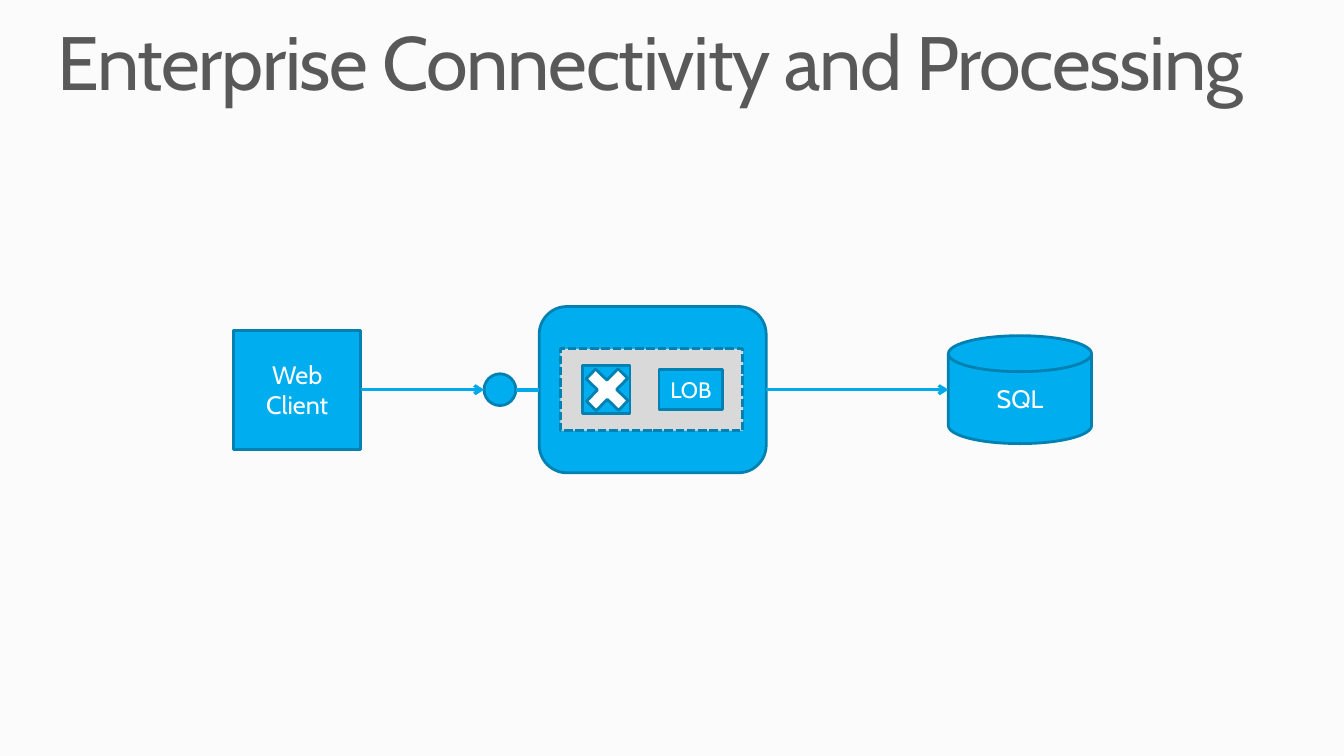
from lxml.etree import SubElement
from pptx import Presentation
from pptx.dml.color import RGBColor
from pptx.enum.dml import MSO_LINE
from pptx.enum.shapes import MSO_CONNECTOR, MSO_SHAPE
from pptx.enum.text import MSO_ANCHOR, MSO_AUTO_SIZE, PP_ALIGN
from pptx.oxml.ns import qn
from pptx.util import Cm, Pt

FONT = "Cabin"
COLORS = {
    "background": "FBFBFB",
    "title": "595959",
    "blue": "00AEEF",
    "outline": "0081B1",
    "arrow": "00AAEA",
    "panel": "D9D9D9",
    "white": "FFFFFF",
}
AXIS = 9.82  # height of the line on which the whole diagram is centred, in cm


def color(name):
    return RGBColor.from_string(COLORS[name])


def add_run(paragraph, text, size, color_name):
    run = paragraph.add_run()
    run.text = text
    run.font.name = FONT
    run.font.size = Pt(size)
    run.font.color.rgb = color(color_name)
    return run


def set_title(slide, text):
    title = slide.shapes.title
    title.left, title.top, title.width, title.height = Cm(1.45), Cm(0.64), Cm(30.96), Cm(2.08)
    frame = title.text_frame
    frame.margin_left = frame.margin_top = frame.margin_right = frame.margin_bottom = 0
    frame.word_wrap = True
    frame.auto_size = MSO_AUTO_SIZE.SHAPE_TO_FIT_TEXT
    frame.vertical_anchor = MSO_ANCHOR.TOP
    paragraph = frame.paragraphs[0]
    paragraph.alignment = PP_ALIGN.LEFT
    paragraph.line_spacing = 0.9
    run = add_run(paragraph, text, 54, "title")
    run.font._element.set("spc", "-100")


def add_node(slide, kind, left, width, height, fill="blue", label=None, size=18):
    """Add an outlined shape centred on the diagram's axis; lengths in cm."""
    shape = slide.shapes.add_shape(
        kind, Cm(left), Cm(AXIS - height / 2), Cm(width), Cm(height)
    )
    shape.shadow.inherit = False
    shape.fill.solid()
    shape.fill.fore_color.rgb = color(fill)
    shape.line.color.rgb = color("outline")
    shape.line.width = Pt(2)
    if label:
        frame = shape.text_frame
        frame.word_wrap = True
        frame.vertical_anchor = MSO_ANCHOR.MIDDLE
        paragraph = frame.paragraphs[0]
        paragraph.alignment = PP_ALIGN.CENTER
        add_run(paragraph, label, size, "white")
    return shape


def add_link(slide, start, end, width=2.25, arrow=True):
    """Join the right side of one node to the left side of another."""
    connector = slide.shapes.add_connector(
        MSO_CONNECTOR.STRAIGHT, start.left + start.width, Cm(AXIS), end.left, Cm(AXIS)
    )
    boxes = (MSO_SHAPE.RECTANGLE, MSO_SHAPE.ROUNDED_RECTANGLE)
    if start.auto_shape_type in boxes:
        connector.begin_connect(start, 3)
    if end.auto_shape_type in boxes:
        connector.end_connect(end, 1)
    connector.line.color.rgb = color("arrow")
    connector.line.width = Pt(width)
    if arrow:
        SubElement(connector.line._get_or_add_ln(), qn("a:tailEnd"), type="arrow")
    SubElement(connector._element.spPr, qn("a:effectLst"))


def main():
    presentation = Presentation()
    presentation.slide_width, presentation.slide_height = Cm(33.87), Cm(19.05)
    slide = presentation.slides.add_slide(presentation.slide_layouts[5])
    slide.background.fill.solid()
    slide.background.fill.fore_color.rgb = color("background")
    set_title(slide, "Enterprise Connectivity and Processing")

    client = add_node(slide, MSO_SHAPE.RECTANGLE, 5.89, 3.2, 3, label="Web Client")
    database = add_node(
        slide, MSO_SHAPE.FLOWCHART_MAGNETIC_DISK, 23.9, 3.61, 2.72, label="SQL"
    )
    service = add_node(slide, MSO_SHAPE.ROUNDED_RECTANGLE, 13.59, 5.72, 4.19)
    endpoint = add_node(slide, MSO_SHAPE.OVAL, 12.2, 0.8, 0.8)
    add_link(slide, client, endpoint)
    add_link(slide, endpoint, service, width=3, arrow=False)
    add_link(slide, service, database)

    panel = add_node(slide, MSO_SHAPE.RECTANGLE, 14.12, 4.6, 2.06, fill="panel")
    panel.line.dash_style = MSO_LINE.SQUARE_DOT
    add_node(slide, MSO_SHAPE.RECTANGLE, 16.61, 1.6, 1, label="LOB", size=16)
    add_node(slide, MSO_SHAPE.RECTANGLE, 14.68, 1.2, 1.2)
    cross = add_node(slide, MSO_SHAPE.CROSS, 14.73, 1.14, 1.14, fill="white")
    cross.adjustments[0] = 0.35
    cross.rotation = 314.1

    presentation.save("out.pptx")


if __name__ == "__main__":
    main()
